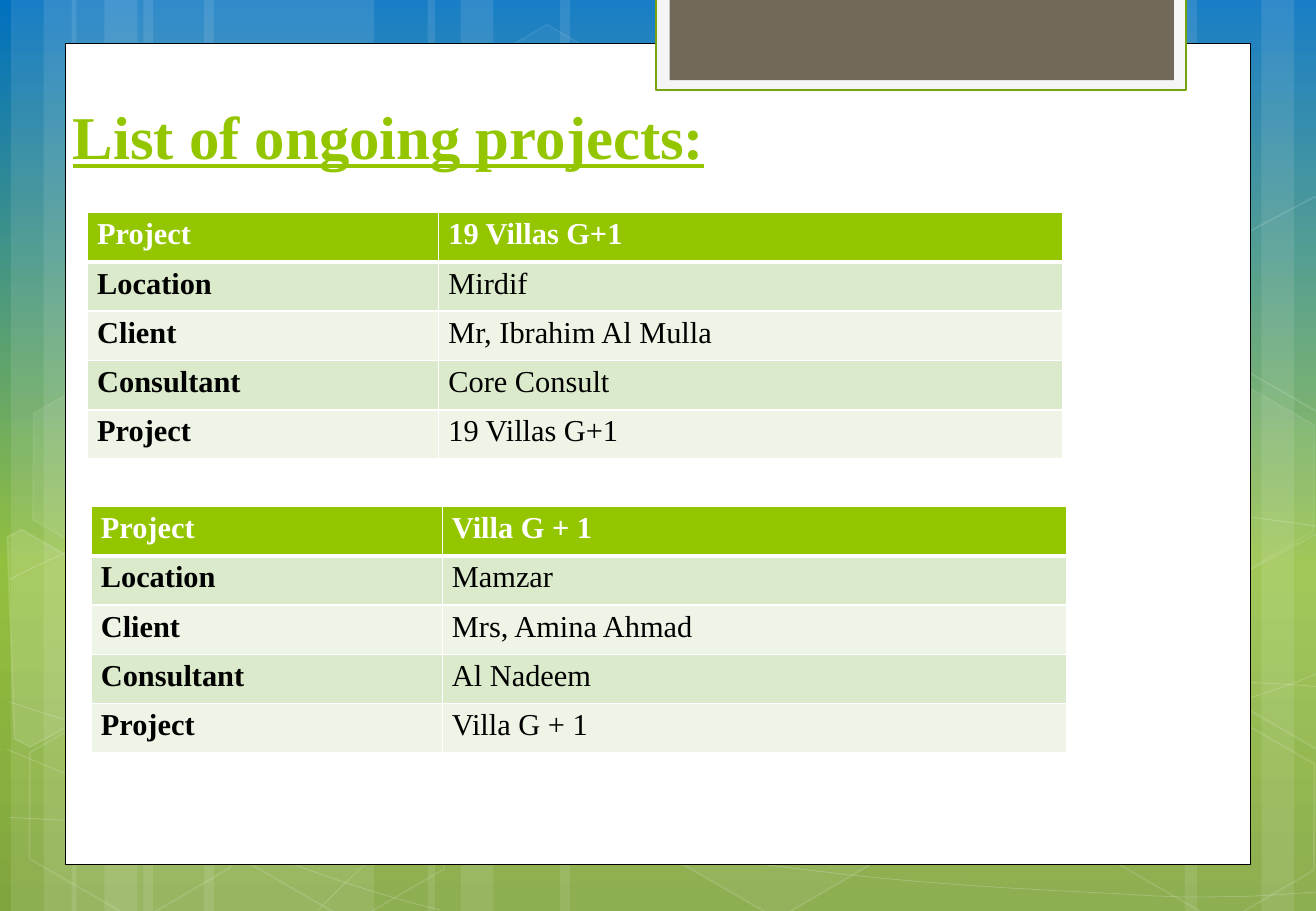
"""Build the slide that lists the ongoing villa projects."""
from copy import deepcopy

from lxml import etree
from pptx import Presentation
from pptx import util as u
from pptx.dml.color import RGBColor
from pptx.enum import shapes, text
from pptx.oxml.ns import qn

SLIDE_SIZE = (10.83, 7.5)
COLOURS = {
    "sky": "0070C0", "grass": "93BF3F", "leaf": "81A53E", "white": "FFFFFF",
    "black": "000000", "tab": "F5F5F5", "tab_line": "74A510", "brown": "71685A",
    "green": "94C600", "dark_band": "DCEACC", "light_band": "EEF5E7",
}
BACKGROUND_STOPS = [("sky", 0), ("grass", 0.62), ("leaf", 1)]

TITLE = "List of ongoing projects:"
TITLE_BOX = (0.5, 0.67, 8.32, 0.79)
TITLE_FONT = {"name": "Times New Roman", "size": u.Pt(36), "bold": True, "underline": True}
CELL_FONT = {"name": "Times New Roman", "size": u.Pt(18)}
CELL_MARGINS = {"margin_left": 0.08, "margin_right": 0.08, "margin_top": 0, "margin_bottom": 0}
LABELS = ["Project", "Location", "Client", "Consultant", "Project"]
PROJECTS = [
    ((0.72, 1.75), ["19 Villas G+1", "Mirdif", "Mr, Ibrahim Al Mulla", "Core Consult", "19 Villas G+1"]),
    ((0.75, 4.17), ["Villa G + 1", "Mamzar", "Mrs, Amina Ahmad", "Al Nadeem", "Villa G + 1"]),
]
COLUMN_WIDTHS = (2.89, 5.14)
TABLE_HEIGHT = 2.03

STRIPES = [
    (1.18, 1.9), (0.09, 0.54), (0.36, 0.9), (1.68, 1.9), (0.59, 0.54), (0.86, 0.9),
    (7.95, 1.9), (10.38, 0.54), (9.75, 0.9), (4.61, 3.34), (3.52, 0.54), (3.79, 0.9),
]
CURVES = [
    [(0.08, 6.73), (0.66, 6.76), (1.25, 6.79), (2.06, 6.78), (2.88, 6.77), (3.87, 6.75),
     (4.96, 6.65), (6.05, 6.55), (7.58, 6.36), (8.58, 6.17), (9.57, 5.98), (10.58, 5.68), (10.91, 5.51)],
    [(0.08, 4.77), (0.39, 4.61), (0.7, 4.46), (1.32, 4.31), (1.93, 4.16), (2.8, 3.94),
     (3.76, 3.87), (4.73, 3.8), (5.89, 3.79), (7.08, 3.87), (8.28, 3.95), (10.26, 4.26), (10.91, 4.34)],
    [(0.06, 6.17), (1.37, 6.72), (2.68, 7.27), (3.62, 7.49)],
    [(0.08, 5.78), (0.42, 5.89), (0.76, 6), (1.39, 6.16), (2.02, 6.31), (2.96, 6.56),
     (3.86, 6.73), (4.77, 6.9), (5.91, 7.08), (6.8, 7.18), (7.7, 7.29), (8.66, 7.33),
     (9.24, 7.36), (9.81, 7.4), (9.96, 7.38), (10.24, 7.38), (10.51, 7.37), (10.71, 7.35), (10.91, 7.34)],
    [(2.62, 7.49), (2.82, 7.29), (3.01, 7.09), (3.27, 6.91), (3.53, 6.73), (3.9, 6.53),
     (4.2, 6.39), (4.5, 6.25), (4.69, 6.19), (5.09, 6.09), (5.49, 5.99), (6.21, 5.85),
     (6.59, 5.78), (6.97, 5.71), (7.03, 5.71), (7.37, 5.69), (7.7, 5.66), (8.23, 5.63),
     (8.6, 5.62), (8.98, 5.61), (9.6, 5.62), (9.6, 5.62), (9.84, 5.62), (10.08, 5.62),
     (10.32, 5.62), (10.52, 5.63), (10.7, 5.64), (10.8, 5.65), (10.89, 5.66), (10.86, 5.65), (10.9, 5.66)],
]
HEXAGON_SIZE = (1.9, 1.52)
HEXAGONS = [
    (3.62, 0.36, 4, 8), (5.38, 5.89, 6, 12), (0.12, 5.91, None, 12), (0.15, 3.12, 7, 8),
    (1.88, 5.92, None, 12), (8.16, 4.53, 10, 12), (9.04, 5.93, None, 12), (9.04, 3.14, 7, 8),
]
CUT_HEXAGONS = [
    ([(0.06, 4.42), (0.18, 4.36), (1.01, 4.84), (1.03, 5.73), (0.25, 6.15), (0.12, 6.08)], 10),
    ([(10.03, 4.83), (10.82, 4.4), (10.9, 4.45), (10.96, 6.16), (10.89, 6.2), (10.06, 5.72)], 4),
    ([(10.03, 2.04), (10.82, 1.62), (10.91, 1.67), (10.96, 3.38), (10.89, 3.42), (10.06, 2.94)], None),
]
PANELS = [
    ((0.54, 0.36, 9.75, 6.76), "white", ("black", 0.5)),
    ((5.4, -0.02, 4.36, 0.76), "tab", ("tab_line", 1.25)),
    ((5.51, -0.02, 4.15, 0.68), "brown", None),
]


def rgb(name):
    """Return a named colour."""
    return RGBColor.from_string(COLOURS[name])


def inches(values):
    """Convert numbers to lengths."""
    return [u.Inches(value) for value in values]


def paint(shape, fill=None, line=None, opacities=()):
    """Set the fill, the line and their opacities in percent."""
    shape.shadow.inherit = False
    if fill:
        shape.fill.solid()
        shape.fill.fore_color.rgb = rgb(fill)
    else:
        shape.fill.background()
    if line:
        shape.line.color.rgb = rgb(line[0])
        shape.line.width = u.Pt(line[1])
    else:
        shape.line.fill.background()
    present = [opacity for opacity in opacities if opacity is not None]
    for colour, opacity in zip(shape.element.spPr.iter(qn("a:srgbClr")), present):
        etree.SubElement(colour, qn("a:alpha"), val=str(opacity * 1000))


def add_outline(slide, points, close):
    """Add a freeform through points given in inches."""
    start, *rest = [inches(point) for point in points]
    builder = slide.shapes.build_freeform(*start, scale=1.0)
    builder.add_line_segments(rest, close=close)
    return builder.convert_to_shape()


def add_curve(slide, points):
    """Add a freeform whose points after the first form cubic curves by threes."""
    shape = add_outline(slide, points, False)
    segments = list(shape.element.spPr.iter(qn("a:lnTo")))
    outline = segments[0].getparent()
    for first in range(0, len(segments), 3):
        cubic = etree.SubElement(outline, qn("a:cubicBezTo"))
        for segment in segments[first:first + 3]:
            cubic.append(segment[0])
            outline.remove(segment)
    return shape


def add_background(slide):
    """Fill the background with the vertical gradient."""
    fill = slide.background.fill
    fill.gradient()
    fill.gradient_angle = 270
    stop_list = slide.background.element.find(".//" + qn("a:gsLst"))
    stop_list.append(deepcopy(stop_list[0]))
    for stop, (colour, position) in zip(fill.gradient_stops, BACKGROUND_STOPS):
        stop.color.rgb = rgb(colour)
        stop.position = position


def add_decoration(slide):
    """Add the stripes, curves, hexagons and panels."""
    kinds = shapes.MSO_SHAPE
    for left, width in STRIPES:
        stripe = slide.shapes.add_shape(kinds.RECTANGLE, *inches((left, 0, width, SLIDE_SIZE[1])))
        paint(stripe, "white", opacities=[10])
    for points in CURVES:
        paint(add_curve(slide, points), None, ("white", 0.5), [20])
    for left, top, fill_opacity, line_opacity in HEXAGONS:
        hexagon = slide.shapes.add_shape(kinds.HEXAGON, *inches((left, top, *HEXAGON_SIZE)))
        hexagon.rotation = 30
        hexagon.adjustments[0], hexagon.adjustments[1] = 0.285, 1.155
        paint(hexagon, fill_opacity and "white", ("white", 1), [fill_opacity, line_opacity])
    for points, fill_opacity in CUT_HEXAGONS:
        paint(add_outline(slide, points, True), fill_opacity and "white", ("white", 1), [fill_opacity, 12])
    for box, fill, line in PANELS:
        paint(slide.shapes.add_shape(kinds.RECTANGLE, *inches(box)), fill, line)


def write(paragraph, words, font, colour):
    """Put formatted words in a paragraph."""
    run = paragraph.add_run()
    run.text = words
    for name, value in font.items():
        setattr(run.font, name, value)
    run.font.color.rgb = rgb(colour)


def add_title(slide):
    """Add the heading."""
    frame = slide.shapes.add_textbox(*inches(TITLE_BOX)).text_frame
    frame.word_wrap = True
    frame.vertical_anchor = text.MSO_ANCHOR.BOTTOM
    write(frame.paragraphs[0], TITLE, TITLE_FONT, "green")


def format_cell(cell, row):
    """Set the borders, fill and margins of a cell."""
    properties = cell._tc.get_or_add_tcPr()
    widths = {"L": 1, "R": 1, "T": 3 if row == 1 else 1, "B": 3 if row == 0 else 1}
    for side, width in widths.items():
        border = etree.SubElement(properties, qn("a:ln" + side), w=str(u.Pt(width)))
        solid = etree.SubElement(border, qn("a:solidFill"))
        etree.SubElement(solid, qn("a:srgbClr"), val=COLOURS["white"])
    cell.fill.solid()
    cell.fill.fore_color.rgb = rgb("green" if row == 0 else "dark_band" if row % 2 else "light_band")
    for name, value in CELL_MARGINS.items():
        setattr(cell, name, u.Inches(value))


def add_project(slide, corner, values):
    """Add the table of one project."""
    size = (sum(COLUMN_WIDTHS), TABLE_HEIGHT)
    table = slide.shapes.add_table(len(LABELS), 2, *inches((*corner, *size))).table
    for column, width in zip(table.columns, COLUMN_WIDTHS):
        column.width = u.Inches(width)
    for row, pair in enumerate(zip(LABELS, values)):
        for column, words in enumerate(pair):
            cell = table.cell(row, column)
            format_cell(cell, row)
            paragraph = cell.text_frame.paragraphs[0]
            paragraph.line_spacing = 1.15
            font = {**CELL_FONT, "bold": row == 0 or column == 0}
            write(paragraph, words, font, "black" if row else "white")


def main():
    """Build and save the presentation."""
    presentation = Presentation()
    presentation.slide_width, presentation.slide_height = inches(SLIDE_SIZE)
    slide = presentation.slides.add_slide(presentation.slide_layouts[6])
    add_background(slide)
    add_decoration(slide)
    add_title(slide)
    for corner, values in PROJECTS:
        add_project(slide, corner, values)
    presentation.save("out.pptx")


if __name__ == "__main__":
    main()
